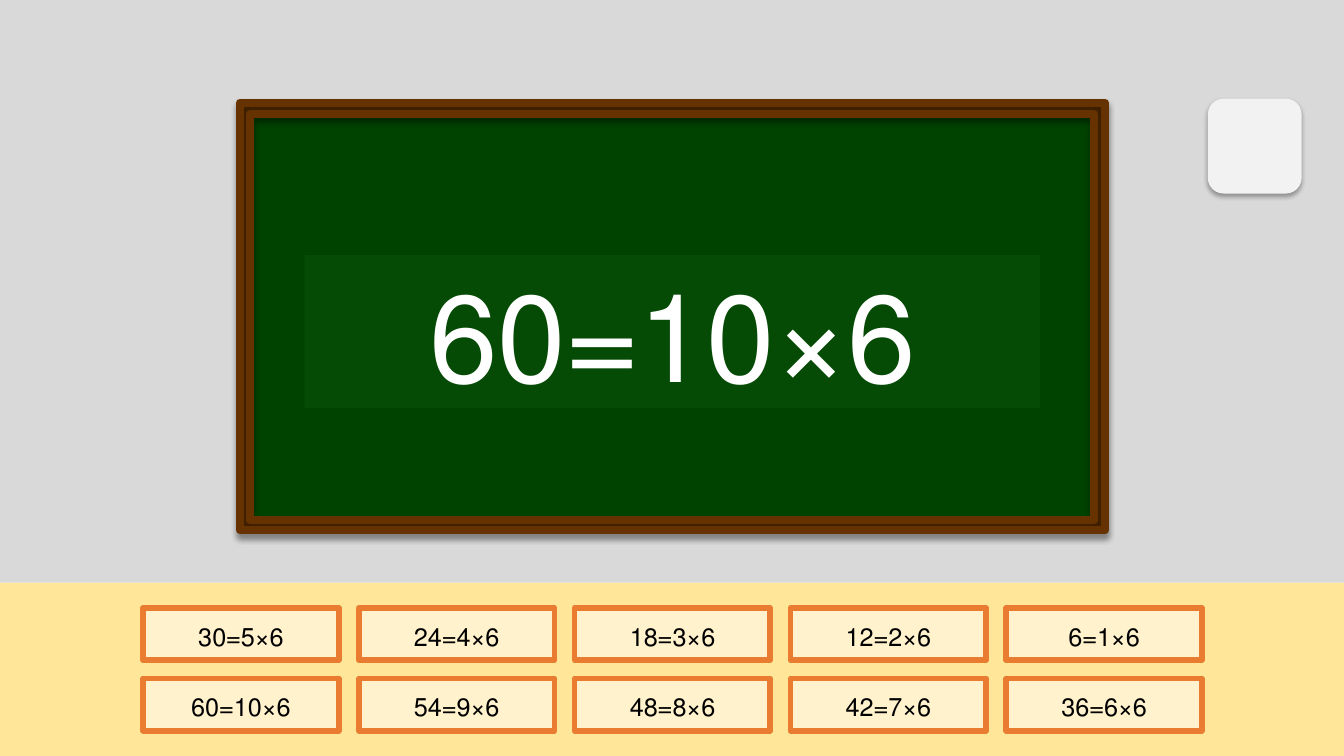
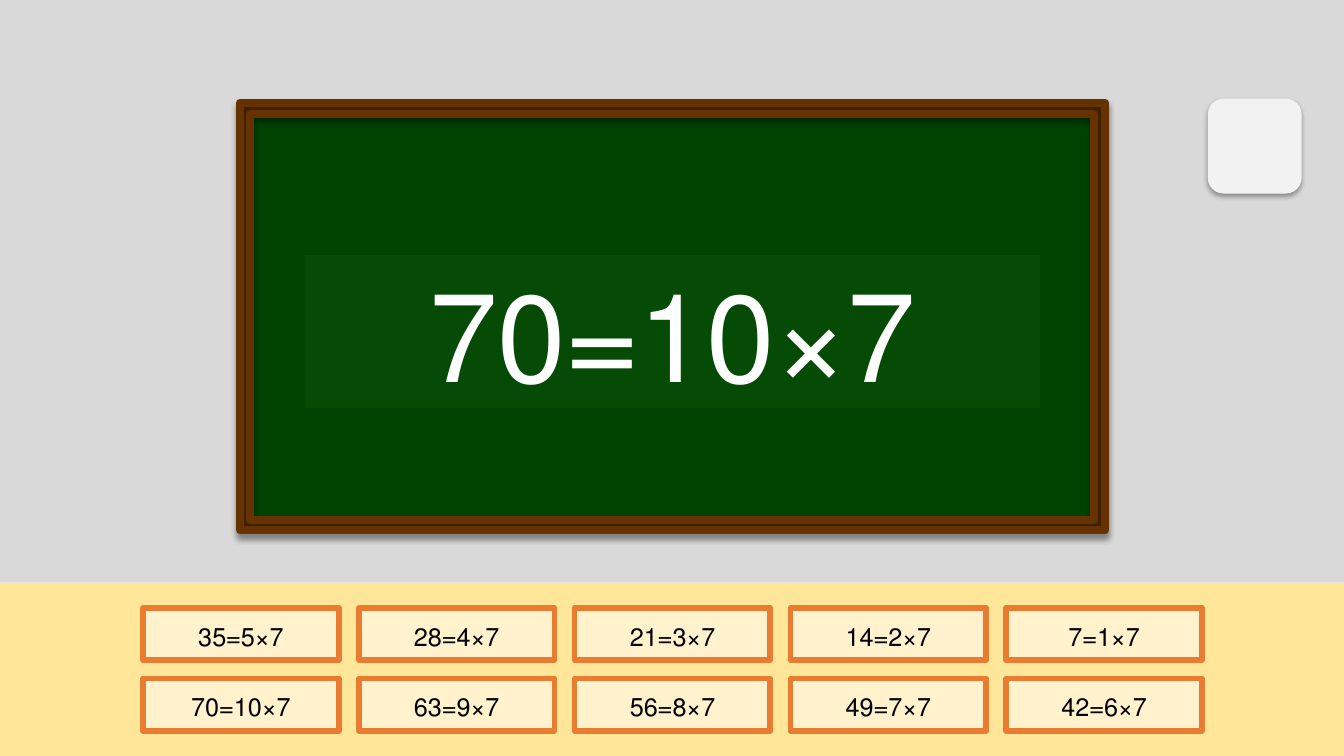
from lxml import etree
from pptx import Presentation
from pptx.dml.color import RGBColor
from pptx.enum.shapes import MSO_SHAPE
from pptx.enum.text import MSO_ANCHOR, PP_ALIGN
from pptx.oxml.ns import qn
from pptx.util import Inches, Pt

RECTANGLE = MSO_SHAPE.RECTANGLE
ROUNDED = MSO_SHAPE.ROUNDED_RECTANGLE
MIDDLE = MSO_ANCHOR.MIDDLE
CENTER = PP_ALIGN.CENTER

WALL = RGBColor(0xD9, 0xD9, 0xD9)
FLOOR = RGBColor(0xFF, 0xE6, 0x99)
BOARD_GREEN = RGBColor(0x00, 0x42, 0x00)
PANEL_GREEN = RGBColor(0x05, 0x4A, 0x05)
WOOD = RGBColor(0x66, 0x33, 0x00)
DARK_WOOD = RGBColor(0x3E, 0x1F, 0x00)
BUTTON_GRAY = RGBColor(0xF2, 0xF2, 0xF2)
CARD_FILL = RGBColor(0xFF, 0xF2, 0xCC)
CARD_LINE = RGBColor(0xE9, 0x7C, 0x30)
BLACK = RGBColor(0x00, 0x00, 0x00)
WHITE = RGBColor(0xFF, 0xFF, 0xFF)
FONT = "Calibri"

CARD_COLUMNS = 5
CARD_RIGHT_COLUMN, CARD_TOP = 9.98, 6.03
CARD_STEP_X, CARD_STEP_Y = 2.14, 0.7


def style_shape(shape, fill, line=None, line_width=0, shadow=None):
    """Set fill and line; shadow is (opacity in percent, blur, distance)."""
    shape.fill.solid()
    shape.fill.fore_color.rgb = fill
    if line is None:
        shape.line.fill.background()
    else:
        shape.line.color.rgb = line
        shape.line.width = Pt(line_width)
    shape.shadow.inherit = False
    if shadow:
        opacity, blur, distance = shadow
        effects = shape._element.spPr.find(qn("a:effectLst"))
        outer = etree.SubElement(
            effects, qn("a:outerShdw"), blurRad=str(Pt(blur)),
            dist=str(Pt(distance)), dir="5400000", algn="t", rotWithShape="0")
        color = etree.SubElement(outer, qn("a:srgbClr"), val="000000")
        etree.SubElement(color, qn("a:alpha"), val=str(opacity * 1000))


def add_equation(slide, box, text, size, color, fill, line=None, line_width=0):
    """Add a box holding one right-to-left equation."""
    shape = slide.shapes.add_shape(RECTANGLE, *map(Inches, box))
    style_shape(shape, fill, line, line_width)
    frame = shape.text_frame
    frame.word_wrap = True
    frame.vertical_anchor = MIDDLE
    frame.margin_left = frame.margin_right = frame.margin_bottom = Inches(0.39)
    frame.margin_top = Inches(0.43)
    frame.text = text
    paragraph = frame.paragraphs[0]
    paragraph.alignment = CENTER
    paragraph._p.get_or_add_pPr().set("rtl", "1")
    font = paragraph.runs[0].font
    font.name = FONT
    font.size = Pt(size)
    font.color.rgb = color


presentation = Presentation()
presentation.slide_width = Inches(13.33)
presentation.slide_height = Inches(7.5)
layout = presentation.slide_layouts[6]
for placeholder in list(layout.placeholders):
    layout.shapes.element.remove(placeholder._element)
slides = [(presentation.slides.add_slide(layout), table) for table in (6, 7)]

# Shared scene: floor, wall, chalkboard, frame and blank button
shapes = slides[0][0].shapes
floor = shapes.add_shape(
    RECTANGLE, Inches(-0.06), Inches(5.78), Inches(13.45), Inches(1.72))
style_shape(floor, FLOOR)
wall = shapes.add_shape(
    RECTANGLE, Inches(-0.06), Inches(0), Inches(13.45), Inches(5.78))
style_shape(wall, WALL)
board = shapes.add_shape(
    RECTANGLE, Inches(2.48), Inches(1.13), Inches(8.37), Inches(4.03))
style_shape(board, BOARD_GREEN, WOOD, 6)

outer_edge = [(2.38, 1.02), (10.96, 1.02), (10.96, 5.26), (2.38, 5.26)]
inner_edge = [(2.48, 1.13), (2.48, 5.16), (10.85, 5.16), (10.85, 1.13)]
outer_points, inner_points = (
    [(Inches(x), Inches(y)) for x, y in edge] for edge in (outer_edge, inner_edge))
builder = shapes.build_freeform(*outer_points[0])
builder.add_line_segments(outer_points[1:], close=True)
builder.move_to(*inner_points[0])
builder.add_line_segments(inner_points[1:], close=True)
frame_shape = builder.convert_to_shape()
style_shape(frame_shape, DARK_WOOD, WOOD, 6, shadow=(40, 4, 3))

button = shapes.add_shape(
    ROUNDED, Inches(11.98), Inches(0.98), Inches(0.93), Inches(0.94))
style_shape(button, BUTTON_GRAY, shadow=(32, 3.5, 2.2))

# The scene belongs to the layout, so every slide shows it
for shape in list(shapes):
    layout.shapes.element.append(shape._element)

# Equation cards, filled from right to left, and the board's equation
for slide, table in slides:
    equations = [f"{table}×{factor}={table * factor}" for factor in range(1, 11)]
    for index, equation in enumerate(equations):
        row, column = divmod(index, CARD_COLUMNS)
        card = (CARD_RIGHT_COLUMN - column * CARD_STEP_X,
                CARD_TOP + row * CARD_STEP_Y, 1.94, 0.52)
        add_equation(slide, card, equation, 18, BLACK, CARD_FILL, CARD_LINE, 4)
    add_equation(slide, (3.02, 2.53, 7.3, 1.52), equations[-1], 88, WHITE, PANEL_GREEN)

presentation.save("out.pptx")
